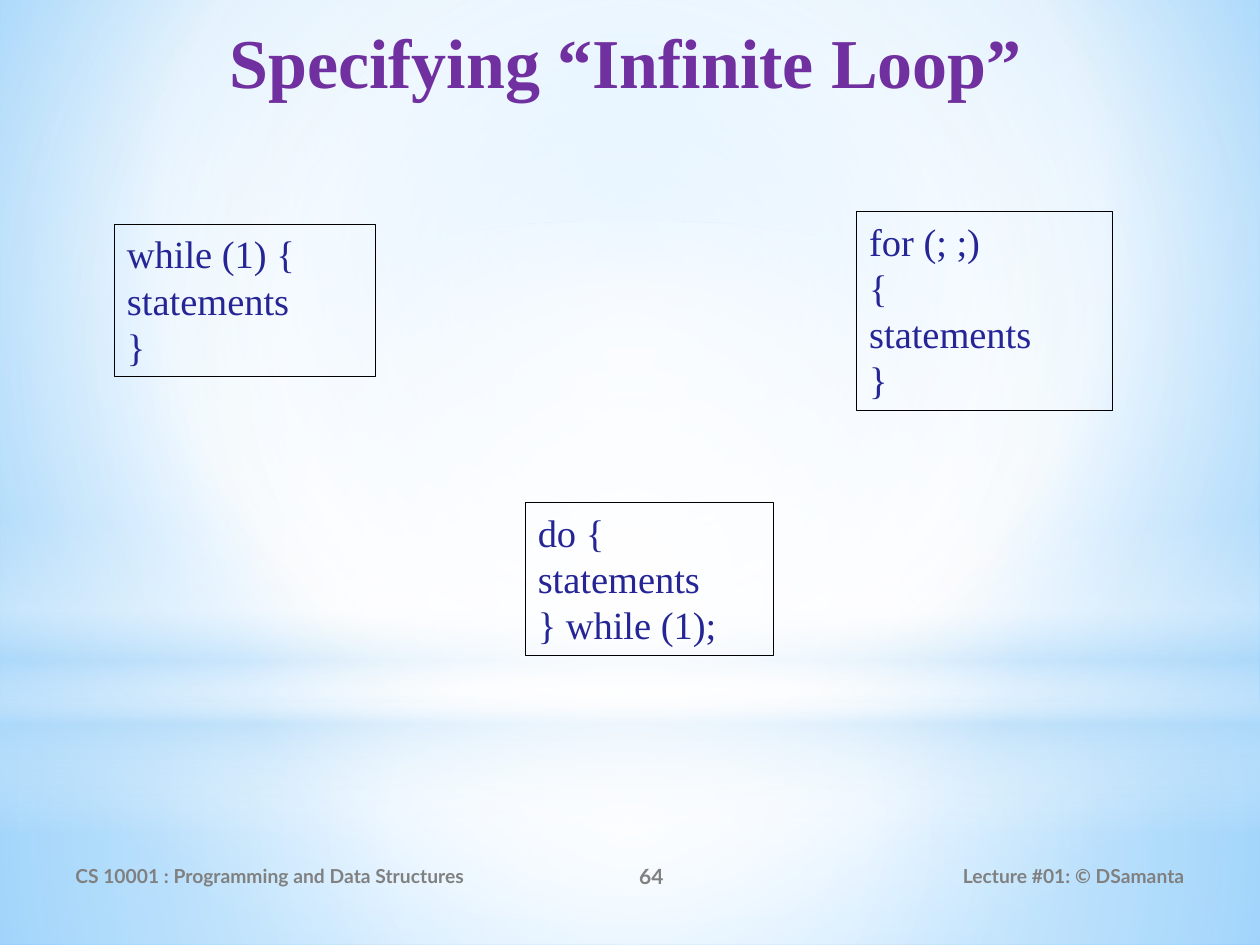
import pptx
import pptx.dml.color
import pptx.enum.shapes
import pptx.enum.text
import pptx.oxml
import pptx.oxml.ns
import pptx.util

COLUMNS, ROWS = 100, 75
ALIGN = pptx.enum.text.PP_ALIGN
ANCHOR = pptx.enum.text.MSO_ANCHOR
SHAPES = pptx.enum.shapes.MSO_SHAPE


def color(value):
    """Turn a hex string into a colour."""
    return pptx.dml.color.RGBColor.from_string(value)


def paint_gradient(fill, element, stops, center=None):
    """Fill with (position, colour, opacity) stops, radial if a center is given, else downward."""
    fill.solid()
    marks = "".join(
        f'<a:gs pos="{position * 1000}"><a:srgbClr val="{value}">'
        f'<a:alpha val="{opacity * 1000}"/></a:srgbClr></a:gs>'
        for position, value, opacity in stops
    )
    direction = '<a:lin ang="5400000" scaled="0"/>'
    if center:
        sides = " ".join(f'{side}="{share * 1000}"' for side, share in zip("ltrb", center))
        direction = f'<a:path path="circle"><a:fillToRect {sides}/></a:path>'
    gradient = pptx.oxml.parse_xml(
        f'<a:gradFill {pptx.oxml.ns.nsdecls("a")} rotWithShape="1">'
        f"<a:gsLst>{marks}</a:gsLst>{direction}</a:gradFill>"
    )
    solid = element.find(".//" + pptx.oxml.ns.qn("a:solidFill"))
    solid.getparent().replace(solid, gradient)


def write_text(frame, text, size, ink, font, bold=False, align=ALIGN.LEFT,
               anchor=ANCHOR.TOP):
    """Write lines of text into a frame with one format."""
    frame.word_wrap = True
    frame.auto_size = pptx.enum.text.MSO_AUTO_SIZE.NONE
    frame.vertical_anchor = anchor
    frame.text = text
    for paragraph in frame.paragraphs:
        paragraph.alignment = align
        style = paragraph.runs[0].font
        style.size = pptx.util.Pt(size)
        style.name = font
        style.bold = bold
        style.color.rgb = color(ink)


class LectureSlide:
    """Holds the lecture style and the current slide."""

    serif, sans = "Times New Roman", "Lato"
    heading, code, muted, outline = "7030A0", "252596", "808080", "000000"
    white, sky = "FFFFFF", "B4DCFA"
    middle = (50, 50, 50, 50)

    def __init__(self, presentation):
        """Add a title-only slide."""
        self.width, self.height = presentation.slide_width, presentation.slide_height
        self.slide = presentation.slides.add_slide(presentation.slide_layouts[5])

    def place(self, left, top, width, height):
        """Turn grid columns and rows into lengths."""
        column, row = self.width / COLUMNS, self.height / ROWS
        return [round(length) for length in
                (left * column, top * row, width * column, height * row)]

    def background(self, stops, center):
        """Paint the slide background."""
        paint_gradient(self.slide.background.fill, self.slide.element, stops, center)

    def glow(self, kind, box, stops, center=None):
        """Add a borderless translucent shape."""
        shape = self.slide.shapes.add_shape(kind, *self.place(*box))
        shape.shadow.inherit = False
        shape.line.fill.background()
        paint_gradient(shape.fill, shape.element, stops, center)

    def title(self, text, box):
        """Format the title placeholder and bring it in front of the backdrop."""
        title = self.slide.shapes.title
        title.left, title.top, title.width, title.height = self.place(*box)
        write_text(title.text_frame, text, 40, self.heading, self.serif,
                   bold=True, align=ALIGN.CENTER)
        title.text_frame.margin_top = pptx.util.Inches(0.05)
        title.element.getparent().append(title.element)

    def footer(self, text, box, align, size=11):
        """Add one part of the footer."""
        shape = self.slide.shapes.add_textbox(*self.place(*box))
        write_text(shape.text_frame, text, size, self.muted, self.sans,
                   bold=True, align=align, anchor=ANCHOR.MIDDLE)

    def code_box(self, text, box):
        """Add an outlined box of code."""
        shape = self.slide.shapes.add_shape(SHAPES.RECTANGLE, *self.place(*box))
        shape.shadow.inherit = False
        shape.fill.background()
        shape.line.color.rgb = color(self.outline)
        shape.line.width = pptx.util.Pt(0.75)
        write_text(shape.text_frame, text, 22, self.code, self.serif)


def main():
    """Build and save the slide."""
    presentation = pptx.Presentation()
    presentation.slide_width = pptx.util.Inches(10)
    presentation.slide_height = pptx.util.Inches(7.5)
    page = LectureSlide(presentation)
    white, sky, middle = page.white, page.sky, page.middle
    horizon = 55.79

    page.background([(0, "9ED5FF", 100), (60, white, 100), (100, "5BB9FF", 100)],
                    (20, 10, 20, 60))
    page.glow(SHAPES.RECTANGLE, (0, horizon, COLUMNS, ROWS - horizon),
              [(0, white, 91), (37, white, 76), (100, sky, 79)], middle)
    page.glow(SHAPES.RECTANGLE, (0, 0, COLUMNS, horizon),
              [(0, white, 89), (48, white, 62), (100, sky, 79)], middle)
    page.glow(SHAPES.RECTANGLE, (0, 41.2, COLUMNS, 25),
              [(0, white, 0), (29, white, 30), (45, sky, 40),
               (55, white, 26), (65, sky, 60), (100, white, 0)])
    page.glow(SHAPES.OVAL, (0, 17.5, COLUMNS, 55.8),
              [(0, white, 100), (56, white, 0)], middle)

    page.title("Specifying “Infinite Loop”", (2, 1, 95.3, 11))
    page.footer("CS 10001 : Programming and Data Structures", (5, 67.5, 36.7, 4), ALIGN.LEFT)
    page.footer("64", (41.7, 67.5, 20, 4), ALIGN.CENTER, size=12)
    page.footer("Lecture #01: © DSamanta", (67.5, 67.5, 27.5, 4), ALIGN.RIGHT)

    page.code_box("while (1) {\nstatements\n}", (9.1, 17.8, 20.7, 12.1))
    page.code_box("for (; ;)\n{\nstatements\n}", (68, 16.8, 20.3, 15.8))
    page.code_box("do {\nstatements\n} while (1);", (41.7, 39.9, 19.7, 12.1))
    presentation.save("out.pptx")


if __name__ == "__main__":
    main()
